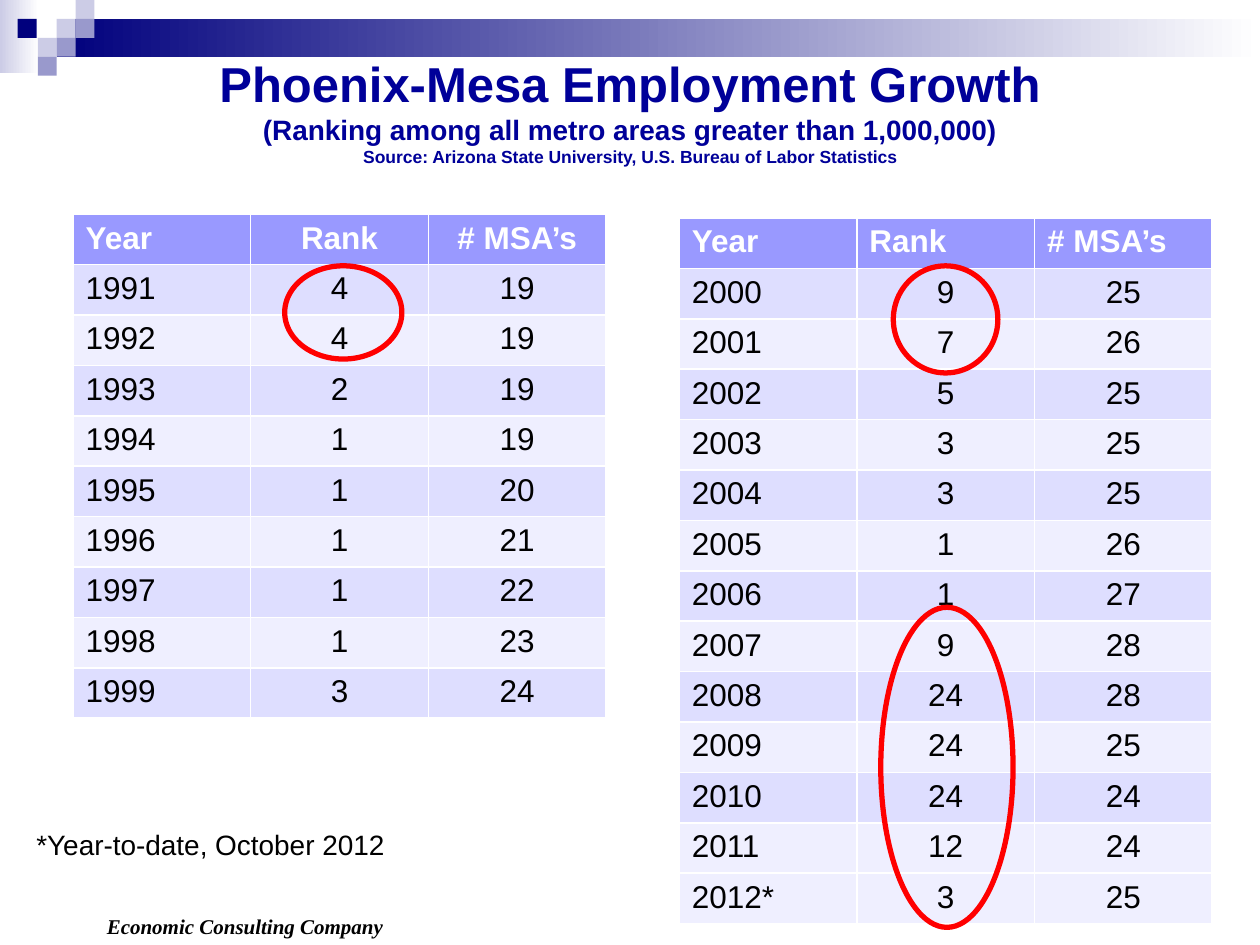
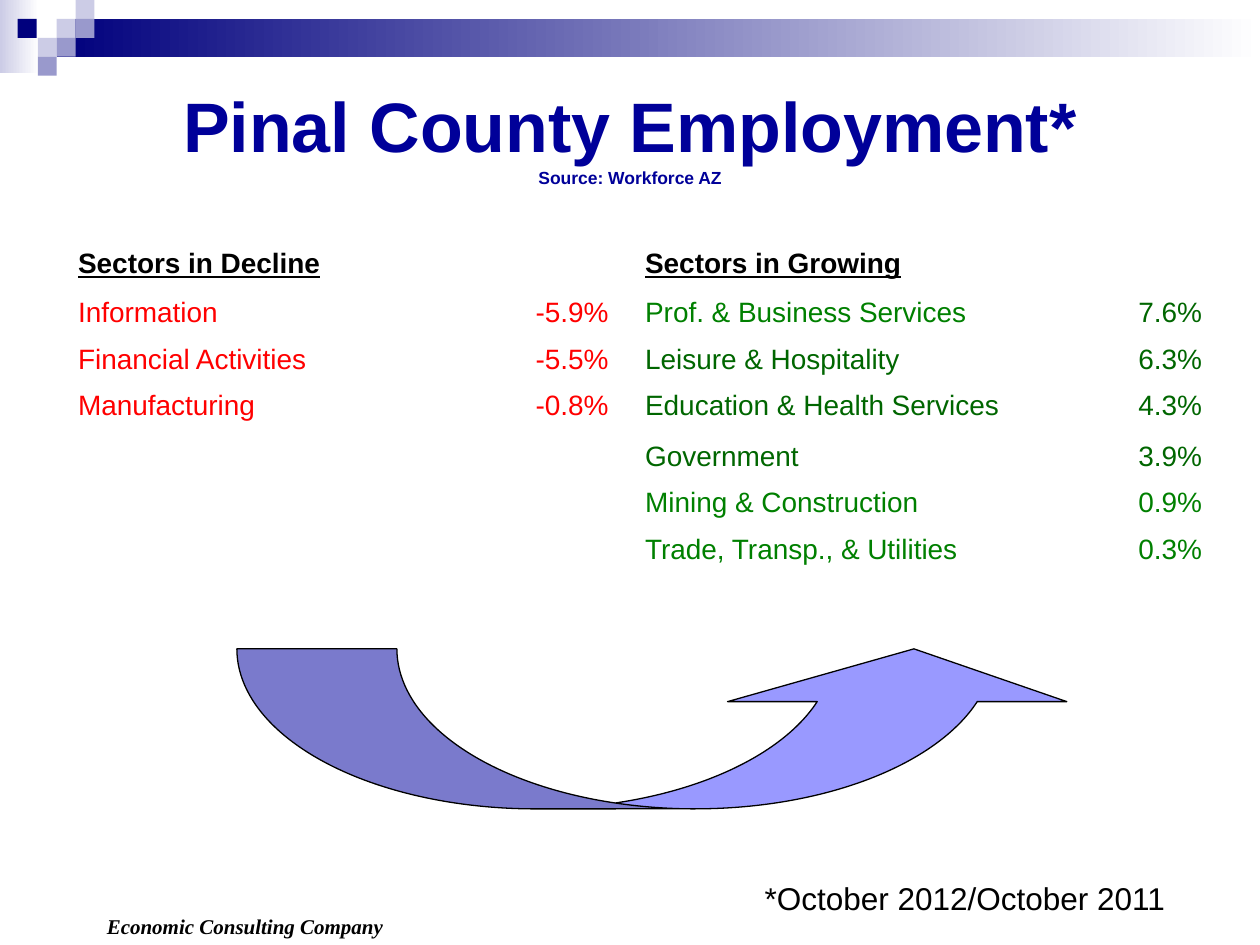
from dataclasses import dataclass
from typing import Any, NamedTuple

from pptx import Presentation
from pptx.dml.color import RGBColor
from pptx.enum.shapes import MSO_SHAPE
from pptx.enum.text import MSO_ANCHOR, MSO_AUTO_SIZE, PP_ALIGN
from pptx.util import Inches, Pt

RECTANGLE, ELLIPSE = MSO_SHAPE.RECTANGLE, MSO_SHAPE.OVAL
CURVED_UP_ARROW = MSO_SHAPE.CURVED_UP_ARROW
LEFT, CENTER, RIGHT = PP_ALIGN.LEFT, PP_ALIGN.CENTER, PP_ALIGN.RIGHT
MIDDLE, BOTTOM = MSO_ANCHOR.MIDDLE, MSO_ANCHOR.BOTTOM
NO_AUTOFIT = MSO_AUTO_SIZE.NONE

WHITE = RGBColor(0xFF, 0xFF, 0xFF)
BLACK = RGBColor(0x00, 0x00, 0x00)
RED = RGBColor(0xFF, 0x00, 0x00)
GREEN = RGBColor(0x00, 0x80, 0x00)
DARK_GREEN = RGBColor(0x00, 0x66, 0x00)
TITLE_BLUE = RGBColor(0x00, 0x00, 0x99)
NAVY = RGBColor(0x00, 0x00, 0x7D)
LAVENDER = RGBColor(0xCC, 0xCC, 0xE6)
SLATE = RGBColor(0x99, 0x99, 0xCC)
PERIWINKLE = RGBColor(0x99, 0x99, 0xFF)
BAND_DARK = RGBColor(0xDE, 0xDE, 0xFF)
BAND_PALE = RGBColor(0xEF, 0xEF, 0xFF)

TITLE_ONLY = 5
RANK_COLUMN_WIDTH = 1.41
RANK_ROW_HEIGHT = 0.4


class Box(NamedTuple):
    left: float
    top: float
    width: float
    height: float

    def inches(self) -> list[int]:
        return [Inches(length) for length in self]


class TitleLine(NamedTuple):
    text: str
    size: int


class Tile(NamedTuple):
    left: float
    top: float
    color: RGBColor


class RankRow(NamedTuple):
    year: str
    rank: int
    metro_count: int


class Sector(NamedTuple):
    name: str
    change: str
    name_color: RGBColor
    change_color: RGBColor


@dataclass
class RankTable:
    left: float
    top: float
    header_align: Any
    rows: list[RankRow]


@dataclass
class SectorTable:
    heading: str
    left: float
    column_widths: list[float]
    row_heights: list[float]
    sectors: list[Sector]


TILES = [
    Tile(0.45, 0.15, LAVENDER),
    Tile(0.6, 0, LAVENDER),
    Tile(0.6, 0.15, SLATE),
    Tile(0.3, 0.3, LAVENDER),
    Tile(0.14, 0.15, NAVY),
    Tile(0.45, 0.3, SLATE),
    Tile(0.3, 0.45, SLATE),
]

RANK_HEADERS = ["Year", "Rank", "# MSA’s"]
NINETIES = RankTable(0.58, 1.7, CENTER, [
    RankRow("1991", 4, 19),
    RankRow("1992", 4, 19),
    RankRow("1993", 2, 19),
    RankRow("1994", 1, 19),
    RankRow("1995", 1, 20),
    RankRow("1996", 1, 21),
    RankRow("1997", 1, 22),
    RankRow("1998", 1, 23),
    RankRow("1999", 3, 24),
])
SINCE_2000 = RankTable(5.39, 1.73, LEFT, [
    RankRow("2000", 9, 25),
    RankRow("2001", 7, 26),
    RankRow("2002", 5, 25),
    RankRow("2003", 3, 25),
    RankRow("2004", 3, 25),
    RankRow("2005", 1, 26),
    RankRow("2006", 1, 27),
    RankRow("2007", 9, 28),
    RankRow("2008", 24, 28),
    RankRow("2009", 24, 25),
    RankRow("2010", 24, 24),
    RankRow("2011", 12, 24),
    RankRow("2012*", 3, 25),
])
RANK_HIGHLIGHTS = [
    Box(2.26, 2.11, 0.93, 0.74),
    Box(7.09, 2.11, 0.83, 0.85),
    Box(6.99, 4.82, 1.05, 2.54),
]

DECLINING = SectorTable(
    "Sectors in Decline", 0.52, [2.97, 1.44],
    [0.69] + [0.37] * 6 + [0.39, 0.43],
    [
        Sector("Information", "-5.9%", RED, RED),
        Sector("Financial Activities", "-5.5%", RED, RED),
        Sector("Manufacturing", "-0.8%", RED, RED),
    ],
)
GROWING = SectorTable(
    "Sectors in Growing", 5.02, [3.11, 1.51],
    [0.69, 0.37, 0.37, 0.4] + [0.37] * 7 + [0.43],
    [
        Sector("Prof. & Business Services", "7.6%", GREEN, DARK_GREEN),
        Sector("Leisure & Hospitality", "6.3%", DARK_GREEN, DARK_GREEN),
        Sector("Education & Health Services", "4.3%", DARK_GREEN, DARK_GREEN),
        Sector("Government", "3.9%", DARK_GREEN, DARK_GREEN),
        Sector("Mining & Construction", "0.9%", GREEN, GREEN),
        Sector("Trade, Transp., & Utilities", "0.3%", GREEN, GREEN),
    ],
)


def write(paragraph: Any, text: str, size: int, color: RGBColor = BLACK,
          align: Any = LEFT, **font_format: Any) -> None:
    paragraph.alignment = align
    run = paragraph.add_run()
    run.text = text
    run.font.color.rgb = color
    for name, value in {"name": "Arial", "size": Pt(size), **font_format}.items():
        setattr(run.font, name, value)


def add_plain_shape(slide: Any, kind: Any, box: Box) -> Any:
    shape = slide.shapes.add_shape(kind, *box.inches())
    shape.shadow.inherit = False
    return shape


def add_tile(slide: Any, tile: Tile) -> Any:
    square = add_plain_shape(slide, RECTANGLE, Box(tile.left, tile.top, 0.15, 0.15))
    square.fill.solid()
    square.fill.fore_color.rgb = tile.color
    square.line.fill.background()
    return square


def add_fading_band(slide: Any, box: Box, start: RGBColor) -> Any:
    band = add_plain_shape(slide, RECTANGLE, box)
    band.fill.gradient()
    band.fill.gradient_angle = 0
    for stop, color in zip(band.fill.gradient_stops, (start, WHITE)):
        stop.color.rgb = color
    band.line.fill.background()
    return band


def add_note(slide: Any, box: Box, text: str, size: int, **font_format: Any) -> Any:
    note = slide.shapes.add_textbox(*box.inches())
    note.text_frame.word_wrap = False
    write(note.text_frame.paragraphs[0], text, size, **font_format)
    return note


def decorate_layout(layout: Any, slide: Any) -> None:
    """Draw the shared parts on a slide, then move them to its layout."""
    shared_parts = [
        add_fading_band(slide, Box(0, 0, 0.31, 0.58), LAVENDER),
        add_fading_band(slide, Box(0.45, 0.15, 9.55, 0.3), NAVY),
        *(add_tile(slide, tile) for tile in TILES),
        add_note(slide, Box(0.75, 7.2, 2.5, 0.3), "Economic Consulting Company", 12,
                 name="Times New Roman", bold=True, italic=True),
    ]
    for part in shared_parts:
        layout.shapes.element.append(part.element)


def set_title(slide: Any, top: float, lines: list[TitleLine]) -> None:
    title = slide.shapes.title
    title.left, title.top, title.width, title.height = Box(0.5, top, 9, 1.25).inches()
    frame = title.text_frame
    frame.auto_size = NO_AUTOFIT
    frame.vertical_anchor = MIDDLE
    for index, line in enumerate(lines):
        paragraph = frame.add_paragraph() if index else frame.paragraphs[0]
        write(paragraph, line.text, line.size, TITLE_BLUE, CENTER, bold=True)


def add_grid(slide: Any, left: float, top: float, column_widths: list[float],
             row_heights: list[float]) -> Any:
    box = Box(left, top, sum(column_widths), sum(row_heights))
    table = slide.shapes.add_table(
        len(row_heights), len(column_widths), *box.inches()).table
    for column, width in zip(table.columns, column_widths):
        column.width = Inches(width)
    for row, height in zip(table.rows, row_heights):
        row.height = Inches(height)
    return table


def add_rank_table(slide: Any, ranking: RankTable) -> None:
    row_count = len(ranking.rows) + 1
    table = add_grid(slide, ranking.left, ranking.top,
                     [RANK_COLUMN_WIDTH] * len(RANK_HEADERS),
                     [RANK_ROW_HEIGHT] * row_count)
    for r, values in enumerate([RANK_HEADERS, *ranking.rows]):
        is_header = r == 0
        provisional = str(values[0]).endswith("*")
        band = BAND_PALE if r % 2 == 0 or provisional else BAND_DARK
        number_align = ranking.header_align if is_header else CENTER
        for c, value in enumerate(values):
            cell = table.cell(r, c)
            cell.fill.solid()
            cell.fill.fore_color.rgb = PERIWINKLE if is_header else band
            write(cell.text_frame.paragraphs[0], str(value), 18,
                  WHITE if is_header else BLACK,
                  number_align if c else LEFT, bold=is_header)


def add_sector_table(slide: Any, group: SectorTable) -> None:
    table = add_grid(slide, group.left, 1.62, group.column_widths, group.row_heights)
    table.first_row = table.horz_banding = False
    for cell in table.iter_cells():
        cell.fill.background()
    heading = table.cell(0, 0)
    heading.vertical_anchor = BOTTOM
    heading.margin_bottom = Inches(0.09)
    write(heading.text_frame.paragraphs[0], group.heading, 16, bold=True, underline=True)
    for r, sector in enumerate(group.sectors, start=1):
        write(table.cell(r, 0).text_frame.paragraphs[0], sector.name, 16,
              sector.name_color)
        write(table.cell(r, 1).text_frame.paragraphs[0], sector.change, 16,
              sector.change_color, RIGHT)
    for r in range(len(group.sectors) + 1, len(group.row_heights)):
        for cell in table.rows[r].cells:
            cell.margin_top = cell.margin_bottom = 0


def build_ranking_slide(slide: Any) -> None:
    set_title(slide, 0.25, [
        TitleLine("Phoenix-Mesa Employment Growth", 28),
        TitleLine("(Ranking among all metro areas greater than 1,000,000)", 16),
        TitleLine("Source: Arizona State University, U.S. Bureau of Labor Statistics", 10),
    ])
    for ranking in (SINCE_2000, NINETIES):
        add_rank_table(slide, ranking)
    for box in RANK_HIGHLIGHTS:
        highlight = add_plain_shape(slide, ELLIPSE, box)
        highlight.fill.background()
        highlight.line.color.rgb = RED
        highlight.line.width = Pt(3)
    add_note(slide, Box(0.19, 6.52, 3.05, 0.37), "*Year-to-date, October 2012", 16)


def build_sector_slide(slide: Any) -> None:
    set_title(slide, 0.45, [
        TitleLine("Pinal County Employment*", 40),
        TitleLine("Source: Workforce AZ", 10),
    ])
    for group in (DECLINING, GROWING):
        add_sector_table(slide, group)
    add_note(slide, Box(5.97, 6.93, 3.41, 0.4), "*October 2012/October 2011", 18)
    shift = add_plain_shape(slide, CURVED_UP_ARROW, Box(1.88, 5.15, 6.72, 1.27))
    for index, adjustment in enumerate((1.06, 2.12, 0.33)):
        shift.adjustments[index] = adjustment
    shift.fill.solid()
    shift.fill.fore_color.rgb = PERIWINKLE
    shift.line.color.rgb = BLACK
    shift.line.width = Pt(0.75)


def main() -> None:
    deck = Presentation()
    deck.slide_width, deck.slide_height = Inches(10), Inches(7.5)
    layout = deck.slide_layouts[TITLE_ONLY]
    ranking_slide, sector_slide = (deck.slides.add_slide(layout) for _ in range(2))
    decorate_layout(layout, ranking_slide)
    build_ranking_slide(ranking_slide)
    build_sector_slide(sector_slide)
    deck.save("out.pptx")


if __name__ == "__main__":
    main()
